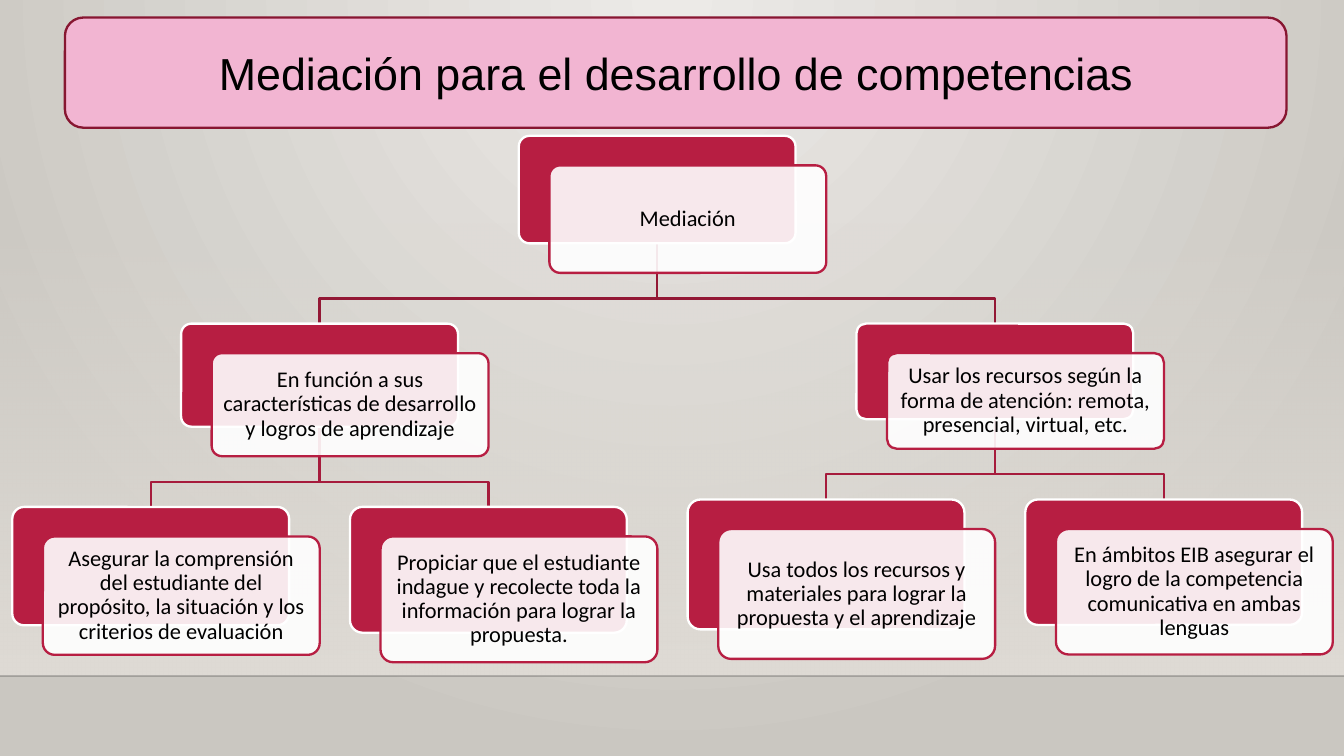
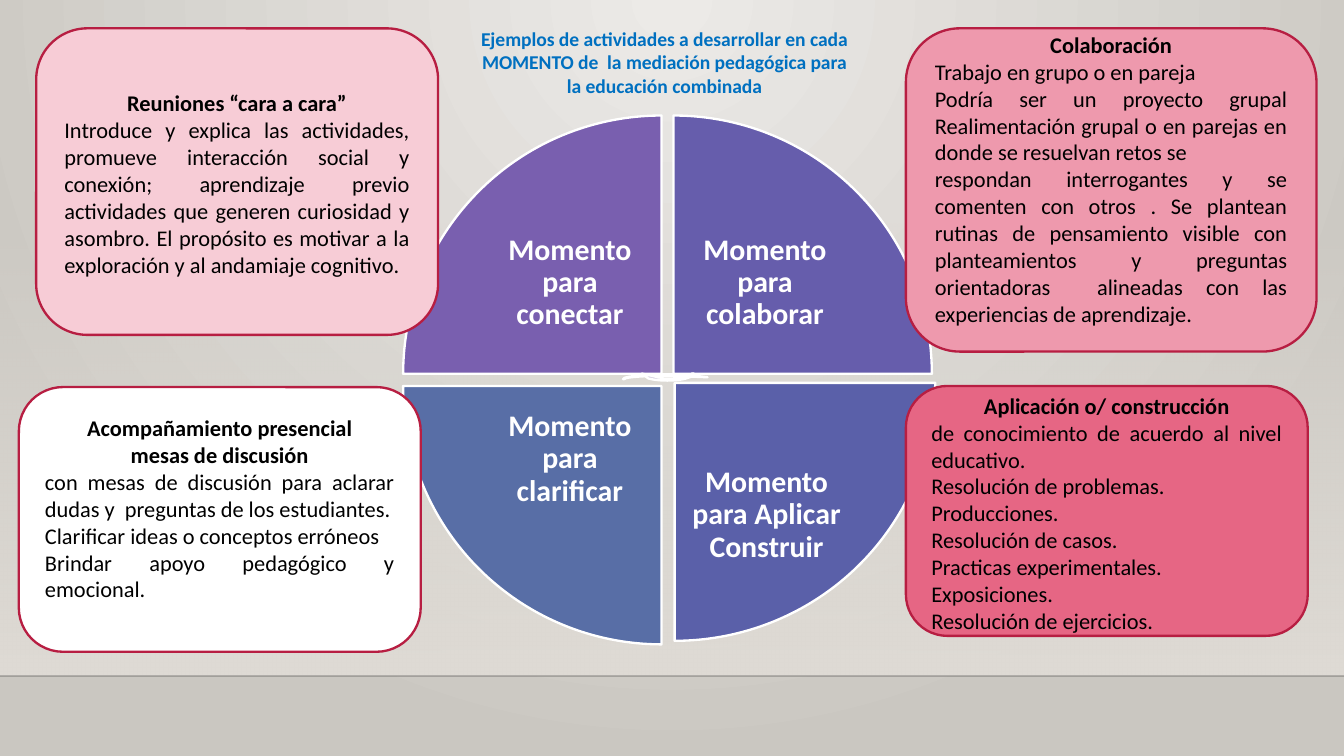
from lxml import etree
from pptx import Presentation
from pptx.dml.color import RGBColor
from pptx.enum.shapes import MSO_CONNECTOR, MSO_SHAPE
from pptx.enum.text import MSO_ANCHOR, MSO_AUTO_SIZE, PP_ALIGN
from pptx.oxml.ns import qn
from pptx.util import Pt

ROUND_RECT = MSO_SHAPE.ROUNDED_RECTANGLE
RECT = MSO_SHAPE.RECTANGLE
WEDGE = MSO_SHAPE.PIE_WEDGE
ARROW = MSO_SHAPE.CIRCULAR_ARROW
STRAIGHT = MSO_CONNECTOR.STRAIGHT
CENTER, JUSTIFY = PP_ALIGN.CENTER, PP_ALIGN.JUSTIFY
TOP, MIDDLE = MSO_ANCHOR.TOP, MSO_ANCHOR.MIDDLE

# Shared look, lengths in points
WIDTH, HEIGHT = 720, 405
BAND_TOP, BAND_BOTTOM = 119.5, 362.2
CRIMSON, WHITE, BLACK = "B71E42", "FFFFFF", "000000"
BODY_FONT = "Calibri"
LINE = 1.25

# Tree measures
NODE_W, FIRST_X, COLUMN_STEP = 148.3, 6.6, 180.9
LEVEL_GAP, BEND = 43, 13.5
FRONT_DX, FRONT_DY = 16.4, 15.8

# Node: column, height, edge colour, text, children
TREE = (1.5, 57.6, "931835", "Mediación", [
    (0.5, 55.2, "A61B3C",
     "En función a sus características de desarrollo y logros de aprendizaje", [
         (0, 63.4, None, "Asegurar la comprensión del estudiante del propósito, "
          "la situación y los criterios de evaluación", []),
         (1, 67.4, None, "Propiciar que el estudiante indague y recolecte toda la "
          "información para lograr la propuesta.", []),
     ]),
    (2.5, 51.2, "A61B3C",
     "Usar los recursos según la forma de atención: remota, presencial, virtual, etc.", [
         (2, 69.6, None, "Usa todos los recursos y materiales para lograr la propuesta "
          "y el aprendizaje", []),
         (3, 67.2, None, "En ámbitos EIB asegurar el logro de la competencia "
          "comunicativa en ambas lenguas", []),
     ]),
])

# Wedge: box, rotation, colour, text box, text
MOMENTS = [
    ((216, 61.9, 138.4, 138.4), 0, "795FAF", (256.3, 102.4, 98, 98),
     "Momento para conectar"),
    ((360.8, 61.9, 138.4, 138.4), 90, "665DAC", (360.8, 102.4, 98, 98),
     "Momento para colaborar"),
    ((361.4, 205.1, 139.6, 138.2), 180, "5A60A9", (361.4, 227, 98.6, 98),
     "Momento para Aplicar Construir"),
    ((216, 206.8, 138.4, 138.4), 270, "586EA6", (256.3, 197, 98, 98),
     "Momento para clarificar"),
]

# Card: box, colour, upward shift of the text, headings, body
CARDS = [
    ((485.3, 15.2, 220, 173.2), "EE99AD", 5.9, ["Colaboración"], [
        "Trabajo en grupo o en pareja",
        "Podría ser un proyecto grupal Realimentación grupal o en parejas en donde se "
        "resuelvan retos se",
        "respondan interrogantes y se comenten con otros . Se plantean rutinas de "
        "pensamiento visible con planteamientos y preguntas orientadoras  alineadas con "
        "las experiencias de aprendizaje.",
    ]),
    ((19.4, 15.2, 215.3, 164.2), "F7CCD6", -1, ["Reuniones “cara a cara”"], [
        "Introduce y explica las actividades, promueve interacción social y conexión; "
        "aprendizaje previo actividades que generen curiosidad y asombro. El propósito "
        "es motivar a la exploración y al andamiaje cognitivo.",
    ]),
    ((10.1, 207.4, 215.3, 141.8), WHITE, 5.9,
     ["Acompañamiento presencial", "mesas de discusión"], [
        "con mesas de discusión para aclarar dudas y  preguntas de los estudiantes.",
        "Clarificar ideas o conceptos erróneos",
        "Brindar apoyo pedagógico y emocional.",
    ]),
    ((485.3, 206.8, 215.3, 133.9), "E66684", -1, ["Aplicación o/ construcción"], [
        "de conocimiento de acuerdo al nivel educativo.",
        "Resolución de problemas.",
        "Producciones.",
        "Resolución de casos.",
        "Practicas experimentales.",
        "Exposiciones.",
        "Resolución de ejercicios.",
    ]),
]


def rgb(value):
    return RGBColor.from_string(value)


def pts(values):
    return [Pt(v) for v in values]


def set_alpha(color, percent):
    etree.SubElement(color, qn("a:alpha")).set("val", str(percent * 1000))


def set_gradient(fill, first, last):
    fill.gradient()
    for stop, position, color in zip(fill.gradient_stops, (0, 1), (first, last)):
        stop.position = position
        stop.color.rgb = rgb(color)


def add_shape(s, kind, box, fill, line=None, rotation=0, corner=None, alpha=None):
    sp = s.shapes.add_shape(kind, *pts(box))
    sp.shadow.inherit = False
    sp.rotation = rotation
    if corner is not None:
        sp.adjustments[0] = corner
    sp.fill.solid()
    sp.fill.fore_color.rgb = rgb(fill)
    if alpha is not None:
        set_alpha(sp.element.spPr.find(".//" + qn("a:srgbClr")), alpha)
    if line:
        sp.line.color.rgb = rgb(line)
        sp.line.width = Pt(LINE)
    else:
        sp.line.fill.background()
    return sp


def frame_text(tf, anchor=MIDDLE, insets=(7.2, 3.6, 7.2, 3.6)):
    tf.word_wrap = True
    tf.auto_size = MSO_AUTO_SIZE.NONE
    tf.vertical_anchor = anchor
    tf.margin_left, tf.margin_top, tf.margin_right, tf.margin_bottom = pts(insets)


def write(p, text, size=12, color=BLACK, bold=False, font=BODY_FONT, align=CENTER,
          spacing=1.0):
    p.alignment = align
    p.line_spacing = spacing
    p.space_before = Pt(0)
    r = p.add_run()
    r.text = text
    r.font.name, r.font.size, r.font.bold = font, Pt(size), bold
    r.font.color.rgb = rgb(color)


def set_title(s, box, text, anchor=MIDDLE, **fmt):
    title = s.shapes.title
    title.left, title.top, title.width, title.height = pts(box)
    frame_text(title.text_frame, anchor)
    write(title.text_frame.paragraphs[0], text, **fmt)
    title.element.getparent().append(title.element)  # bring to front


def add_backdrop(prs, s):
    """Give the master its gradient, band and rule, which all slides show."""
    master = prs.slide_master
    set_gradient(master.background.fill, "ECEAE7", "CAC7C1")
    grad = master.element.cSld.find(".//" + qn("a:gradFill"))
    linear = grad.find(qn("a:lin"))
    radial = etree.Element(qn("a:path"), path="circle")
    etree.SubElement(radial, qn("a:fillToRect"), l="43000", r="43000", b="100000")
    grad.replace(linear, radial)

    band = add_shape(s, RECT, (0, BAND_TOP, WIDTH, BAND_BOTTOM - BAND_TOP), "DFDBD5")
    set_gradient(band.fill, "DFDBD5", "DFDBD5")
    band.fill.gradient_angle = 270
    set_alpha(band.element.spPr.find(".//" + qn("a:srgbClr")), 0)

    rule = s.shapes.add_connector(STRAIGHT, *pts((0, BAND_BOTTOM, WIDTH, BAND_BOTTOM)))
    rule.line.color.rgb = rgb("000001")
    rule.line.width = Pt(1)
    set_alpha(rule.element.spPr.find(".//" + qn("a:srgbClr")), 20)
    etree.SubElement(rule.element.spPr, qn("a:effectLst"))

    for index, part in enumerate((band, rule), start=2):
        master.element.cSld.spTree.insert(index, part.element)


def node_x(column):
    return FIRST_X + column * COLUMN_STEP


def add_edge(s, parent_x, start_y, child_x, end_y, color):
    bend_y = end_y - BEND
    builder = s.shapes.build_freeform(Pt(parent_x), Pt(start_y))
    corners = [(parent_x, bend_y), (child_x, bend_y), (child_x, end_y)]
    builder.add_line_segments([pts(c) for c in corners], close=False)
    sp = builder.convert_to_shape()
    sp.shadow.inherit = False
    sp.fill.background()
    sp.line.color.rgb = rgb(color)
    sp.line.width = Pt(LINE)


def add_branch(s, node, top):
    column, height, edge_color, text, children = node
    x, child_top = node_x(column), top + height + LEVEL_GAP
    for child in children:
        add_edge(s, x + NODE_W / 2, top + height,
                 node_x(child[0]) + NODE_W / 2, child_top, edge_color)
    add_shape(s, ROUND_RECT, (x, top, NODE_W, height), CRIMSON, WHITE, corner=0.1)
    front = add_shape(s, ROUND_RECT, (x + FRONT_DX, top + FRONT_DY, NODE_W, height),
                      WHITE, CRIMSON, corner=0.1, alpha=90)
    frame_text(front.text_frame, insets=[3.6] * 4)
    write(front.text_frame.paragraphs[0], text, spacing=0.9)
    for child in children:
        add_branch(s, child, child_top)


def add_moment(s, box, rotation, color, text_box, text):
    add_shape(s, WEDGE, box, color, WHITE, rotation=rotation)
    tf = s.shapes.add_textbox(*pts(text_box)).text_frame
    frame_text(tf, insets=[8.6] * 4)
    write(tf.paragraphs[0], text, size=16, color=WHITE, bold=True, spacing=0.9)


def add_card(s, box, color, shift, headings, body):
    tf = add_shape(s, ROUND_RECT, box, color, CRIMSON).text_frame
    frame_text(tf, insets=(7.2, 3.6 + max(0, -2 * shift), 7.2, 3.6 + max(0, 2 * shift)))
    for i, text in enumerate(headings + body):
        p = tf.add_paragraph() if i else tf.paragraphs[0]
        heading = i < len(headings)
        write(p, text, bold=heading, align=CENTER if heading else JUSTIFY)


def main():
    prs = Presentation()
    prs.slide_width, prs.slide_height = Pt(WIDTH), Pt(HEIGHT)
    title_only = prs.slide_layouts[5]

    # Slide 1: mediation tree
    s = prs.slides.add_slide(title_only)
    add_backdrop(prs, s)
    title_box = (34.8, 9.4, 654.4, 59)
    add_shape(s, ROUND_RECT, title_box, "F2B5D2", "871631")
    set_title(s, title_box, "Mediación para el desarrollo de competencias",
              size=24, font="Arial")
    add_branch(s, TREE, 72.8)

    # Slide 2: the four moments
    s = prs.slides.add_slide(title_only)
    for moment in MOMENTS:
        add_moment(s, *moment)
    add_shape(s, ARROW, (333.4, 200.2, 49, 5.8), "D7D2E3", WHITE)
    add_shape(s, ARROW, (342.7, 195.8, 29.5, 8.6), "D7D2E3", WHITE, rotation=180)
    for card in CARDS:
        add_card(s, *card)
    set_title(s, (248.4, 10.8, 215.3, 58.3),
              "Ejemplos de actividades a desarrollar en cada MOMENTO de  la mediación "
              "pedagógica para la educación combinada",
              anchor=TOP, size=10.5, color="0070C0", bold=True)

    prs.save("out.pptx")


if __name__ == "__main__":
    main()
